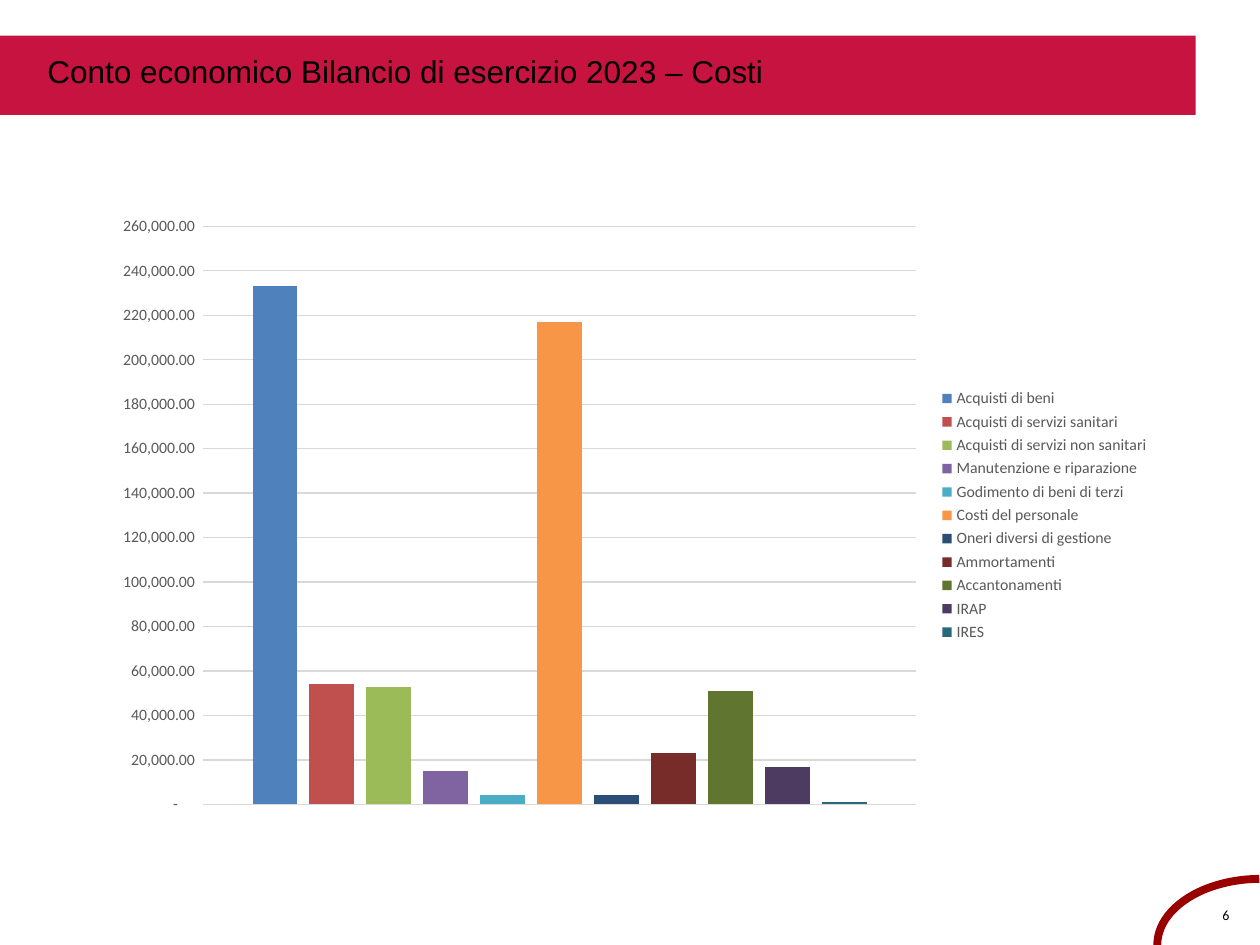
from pptx import Presentation
from pptx.chart.data import CategoryChartData
from pptx.dml.color import RGBColor
from pptx.enum.chart import XL_CHART_TYPE as ChartType, XL_LEGEND_POSITION as LegendPos
from pptx.enum.chart import XL_TICK_MARK as TickMark
from pptx.enum.shapes import MSO_SHAPE as Shape
from pptx.enum.text import PP_ALIGN as Align
from pptx.util import Pt

COLORS = {"band": "C6133F", "arc": "990000", "text": "000000",
          "label": "595959", "grid": "D9D9D9"}

# Cost item, value, bar colour
COSTS = [
    ("Acquisti di beni", 233000, "4F81BD"),
    ("Acquisti di servizi sanitari", 54000, "C0504D"),
    ("Acquisti di servizi non sanitari", 53000, "9BBB59"),
    ("Manutenzione e riparazione", 15000, "8064A2"),
    ("Godimento di beni di terzi", 4000, "4BACC6"),
    ("Costi del personale", 217000, "F79646"),
    ("Oneri diversi di gestione", 4000, "2C4D75"),
    ("Ammortamenti", 23000, "772C2A"),
    ("Accantonamenti", 51000, "5F7530"),
    ("IRAP", 17000, "4D3B62"),
    ("IRES", 1000, "276A7C"),
]


def set_font(font, name, size, color):
    font.name = name
    font.size = Pt(size)
    font.color.rgb = RGBColor.from_string(COLORS[color])


def add_text(page, text, left, top, width, height, name, size):
    box = page.shapes.add_textbox(Pt(left), Pt(top), Pt(width), Pt(height))
    box.text_frame.word_wrap = True
    para = box.text_frame.paragraphs[0]
    para.text = text
    set_font(para.font, name, size, "text")
    return box.text_frame


deck = Presentation()
deck.slide_width, deck.slide_height = Pt(720), Pt(540)
page = deck.slides.add_slide(deck.slide_layouts[6])

# Corner arc with the page number
arc = page.shapes.add_shape(Shape.ARC, Pt(682.5), Pt(481), Pt(75.6), Pt(118))
arc.rotation = 270
arc.adjustments[0] = 162
arc.adjustments[1] = 215.34
arc.shadow.inherit = False
arc.fill.background()
arc.line.color.rgb = RGBColor.from_string(COLORS["arc"])
arc.line.width = Pt(4.5)

number = add_text(page, "6", 689, 517, 23, 11.5, "Calibri", 8)
number.margin_left = number.margin_right = number.margin_bottom = 0
number.margin_top = Pt(2)
number.paragraphs[0].alignment = Align.CENTER
number.paragraphs[0].line_spacing = 0.93

# Title band
band = page.shapes.add_shape(Shape.RECTANGLE, 0, Pt(20.4), Pt(683.3), Pt(45.3))
band.shadow.inherit = False
band.fill.solid()
band.fill.fore_color.rgb = RGBColor.from_string(COLORS["band"])
band.line.fill.background()
add_text(page, "Conto economico Bilancio di esercizio 2023 – Costi",
         20, 26, 629, 51, "Arial", 18)

# Cost chart: one series per item
data = CategoryChartData()
data.categories = ["1"]
for name, value, color in COSTS:
    data.add_series(name, [value])
chart = page.shapes.add_chart(ChartType.COLUMN_CLUSTERED, Pt(56.2), Pt(117),
                              Pt(607.7), Pt(355), data).chart
chart.has_title = False
set_font(chart.font, "Calibri", 10, "text")

plot = chart.plots[0]
plot.vary_by_categories = False
plot.gap_width, plot.overlap = 219, -27
for series, (name, value, color) in zip(plot.series, COSTS):
    series.invert_if_negative = False
    series.format.fill.solid()
    series.format.fill.fore_color.rgb = RGBColor.from_string(color)

# Axes
chart.category_axis.visible = False
axis = chart.value_axis
axis.minimum_scale, axis.maximum_scale, axis.major_unit = 0, 260000, 20000
axis.major_tick_mark = axis.minor_tick_mark = TickMark.NONE
axis.format.line.fill.background()
axis.has_major_gridlines = True
grid = axis.major_gridlines.format.line
grid.color.rgb = RGBColor.from_string(COLORS["grid"])
grid.width = Pt(0.75)
labels = axis.tick_labels
labels.number_format = r'_(* #,##0.00_);_(* \(#,##0.00\);_(* "-"??_);_(@_)'
labels.number_format_is_linked = False
set_font(labels.font, "Calibri", 9, "label")

# Legend
chart.has_legend = True
chart.legend.position = LegendPos.RIGHT
chart.legend.include_in_layout = False
set_font(chart.legend.font, "Calibri", 9, "label")

deck.save("out.pptx")
